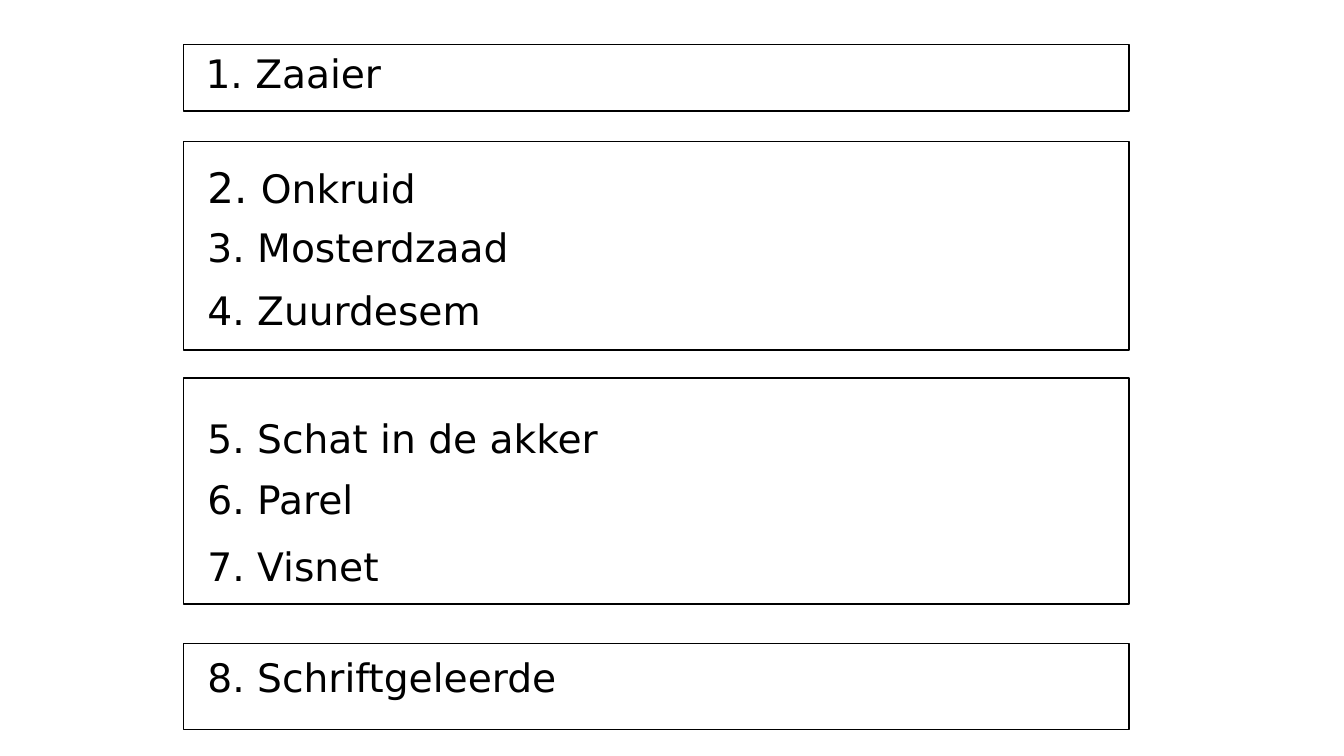
import pptx
import pptx.dml.color
import pptx.enum.shapes
import pptx.enum.text
import pptx.util

Cm = pptx.util.Cm
COLOURS = {"ink": "000000", "paper": "FFFFFF"}
FRAME_LEFT, FRAME_WIDTH = 4.62, 23.83
LABEL_LEFT = 4.98

# Frames: top, height
FRAMES = [(1.12, 1.68), (3.56, 5.26), (9.53, 5.69), (16.21, 2.18)]

# Parables in order: left, top, width, name
PARABLES = [
    (4.93, 1.12, 5.0, "Zaaier"),
    (LABEL_LEFT, 3.94, 5.92, "Onkruid"),
    (LABEL_LEFT, 5.49, 8.2, "Mosterdzaad"),
    (LABEL_LEFT, 7.09, 7.52, "Zuurdesem"),
    (LABEL_LEFT, 10.31, 10.67, "Schat in de akker"),
    (LABEL_LEFT, 11.86, 4.32, "Parel"),
    (LABEL_LEFT, 13.54, 4.95, "Visnet"),
    (LABEL_LEFT, 16.33, 9.45, "Schriftgeleerde"),
]
LARGE_NUMBER = 2


class ParablePage:
    """Holds the text style and the current slide."""

    font_format = {"name": "DejaVu Sans", "size": pptx.util.Pt(28)}
    frame_format = {
        "word_wrap": False,
        "auto_size": pptx.enum.text.MSO_AUTO_SIZE.SHAPE_TO_FIT_TEXT,
    }

    def __init__(self, deck):
        self.page = deck.slides.add_slide(deck.slide_layouts[6])
        fill = self.page.background.fill
        fill.solid()
        fill.fore_color.rgb = self.colour("paper")

    def colour(self, name):
        return pptx.dml.color.RGBColor.from_string(COLOURS[name])

    def frame(self, top, height):
        box = self.page.shapes.add_shape(
            pptx.enum.shapes.MSO_SHAPE.RECTANGLE,
            Cm(FRAME_LEFT), Cm(top), Cm(FRAME_WIDTH), Cm(height))
        box.shadow.inherit = False
        box.fill.background()
        box.line.color.rgb = self.colour("ink")
        box.line.width = pptx.util.Pt(1)

    def label(self, left, top, width, height, spans):
        box = self.page.shapes.add_textbox(Cm(left), Cm(top), Cm(width), Cm(height))
        for key, value in self.frame_format.items():
            setattr(box.text_frame, key, value)
        para = box.text_frame.paragraphs[0]
        for text, changes in spans:
            span = para.add_run()
            span.text = text
            for key, value in {**self.font_format, **changes}.items():
                setattr(span.font, key, value)
            span.font.color.rgb = self.colour("ink")


def main():
    deck = pptx.Presentation()
    deck.slide_width, deck.slide_height = Cm(33.87), Cm(19.05)
    page = ParablePage(deck)

    # Frames around the groups
    for top, height in FRAMES:
        page.frame(top, height)

    # Numbered parables
    for number, (left, top, width, name) in enumerate(PARABLES, start=1):
        if number == LARGE_NUMBER:
            spans = [(f"{number}. ", {"size": pptx.util.Pt(30)}), (name, {})]
            height = 1.55
        else:
            spans = [(f"{number}. {name}", {})]
            height = 1.45
        page.label(left, top, width, height, spans)

    deck.save("out.pptx")


if __name__ == "__main__":
    main()
